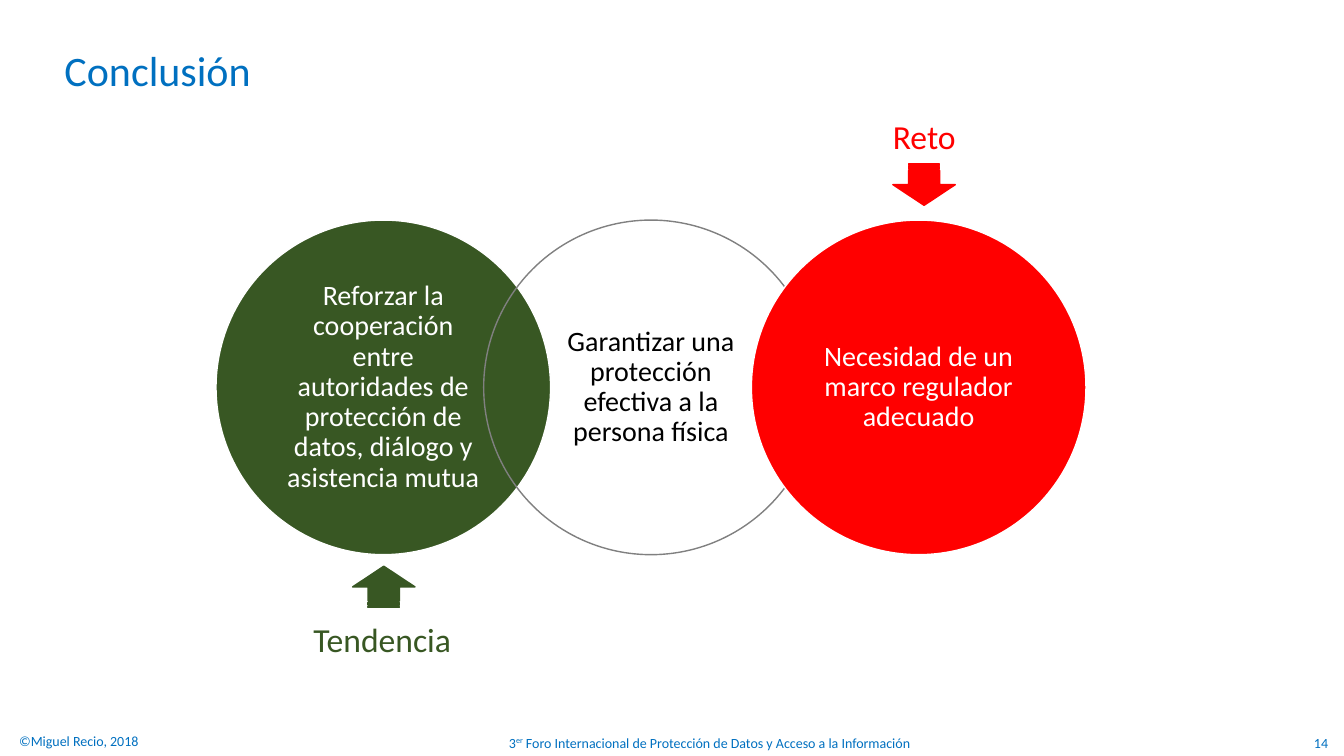
from pptx import Presentation
from pptx.dml.color import RGBColor
from pptx.enum.shapes import MSO_SHAPE
from pptx.enum.text import MSO_ANCHOR, PP_ALIGN
from pptx.util import Pt

OVAL, ARROW = MSO_SHAPE.OVAL, MSO_SHAPE.STRIPED_RIGHT_ARROW
LEFT, CENTER = PP_ALIGN.LEFT, PP_ALIGN.CENTER
TOP, MIDDLE = MSO_ANCHOR.TOP, MSO_ANCHOR.MIDDLE

THEME = {
    "font": "Calibri",
    "blue": RGBColor(0x00, 0x70, 0xC0),
    "green": RGBColor(0x38, 0x57, 0x23),
    "red": RGBColor(0xFF, 0x00, 0x00),
    "gray": RGBColor(0x80, 0x80, 0x80),
    "white": RGBColor(0xFF, 0xFF, 0xFF),
    "black": RGBColor(0x00, 0x00, 0x00),
    "title": 30, "label": 24, "body": 20, "footer": 10,
}

prs = Presentation()
prs.slide_width, prs.slide_height = Pt(960), Pt(540)
s = prs.slides.add_slide(prs.slide_layouts[6])


def add_text(text, box, size, color, align=LEFT, anchor=MIDDLE, wrap=True,
             insets=(7.2, 3.6, 7.2, 3.6), spacing=1.0):
    tf = s.shapes.add_textbox(*map(Pt, box)).text_frame
    tf.word_wrap = wrap
    tf.vertical_anchor = anchor
    tf.margin_left, tf.margin_top, tf.margin_right, tf.margin_bottom = map(Pt, insets)
    p = tf.paragraphs[0]
    p.alignment = align
    p.line_spacing = spacing
    for i, part in enumerate(text.split("^")):
        r = p.add_run()
        r.text = part
        r.font.name = THEME["font"]
        r.font.size = Pt(THEME[size])
        r.font.color.rgb = THEME[color]
        if i % 2:
            r.font._element.set("baseline", "30000")


def add_figure(kind, box, fill, line, rotation=0):
    sp = s.shapes.add_shape(kind, *map(Pt, box))
    sp.shadow.inherit = False
    sp.rotation = rotation
    if fill:
        sp.fill.solid()
        sp.fill.fore_color.rgb = THEME[fill]
    else:
        sp.fill.background()
    sp.line.color.rgb = THEME[line]
    sp.line.width = Pt(1)


add_text("Conclusión", (24.5, 12.2, 894, 75.6), "title", "blue",
         insets=(21.6, 3.6, 7.2, 3.6))

footers = [
    ("3^er^ Foro Internacional de Protección de Datos y Acceso a la Información",
     (100, 521.3, 807, 18), CENTER),
    ("14", (918.7, 521.3, 43.2, 18), CENTER),
    ("©Miguel Recio, 2018", (0, 518.4, 150, 22.3), LEFT),
]
for text, box, align in footers:
    add_text(text, box, "footer", "blue", align, insets=(13.7, 3.6, 7.2, 3.6))

circles = [
    ("Reforzar la cooperación entre autoridades de protección de datos, "
     "diálogo y asistencia mutua", "green", "white", "white"),
    ("Garantizar una protección efectiva a la persona física", None, "gray", "black"),
    ("Necesidad de un marco regulador adecuado", "red", "white", "white"),
]
diameter, step, left, top, inset = 239, 191.2, 154.3, 157.2, 35
inner = diameter - 2 * inset
for i, (text, fill, line, color) in enumerate(circles):
    x = left + i * step
    add_figure(OVAL, (x, top, diameter, diameter), fill, line)
    add_text(text, (x + inset, top + inset, inner, inner), "body", color, CENTER,
             insets=(13, 2, 13, 2), spacing=0.9)

labels = [
    ("Tendencia", "green", (216.7, 438.5, 113.8, 36), (259.4, 396.9), 270),
    ("Reto", "red", (630.7, 79.2, 59.8, 36), (645.3, 109.6), 90),
]
for text, color, box, (x, y), rotation in labels:
    add_figure(ARROW, (x, y, 29.5, 44.6), color, color, rotation)
    add_text(text, box, "label", color, anchor=TOP, wrap=False)

prs.save("out.pptx")
